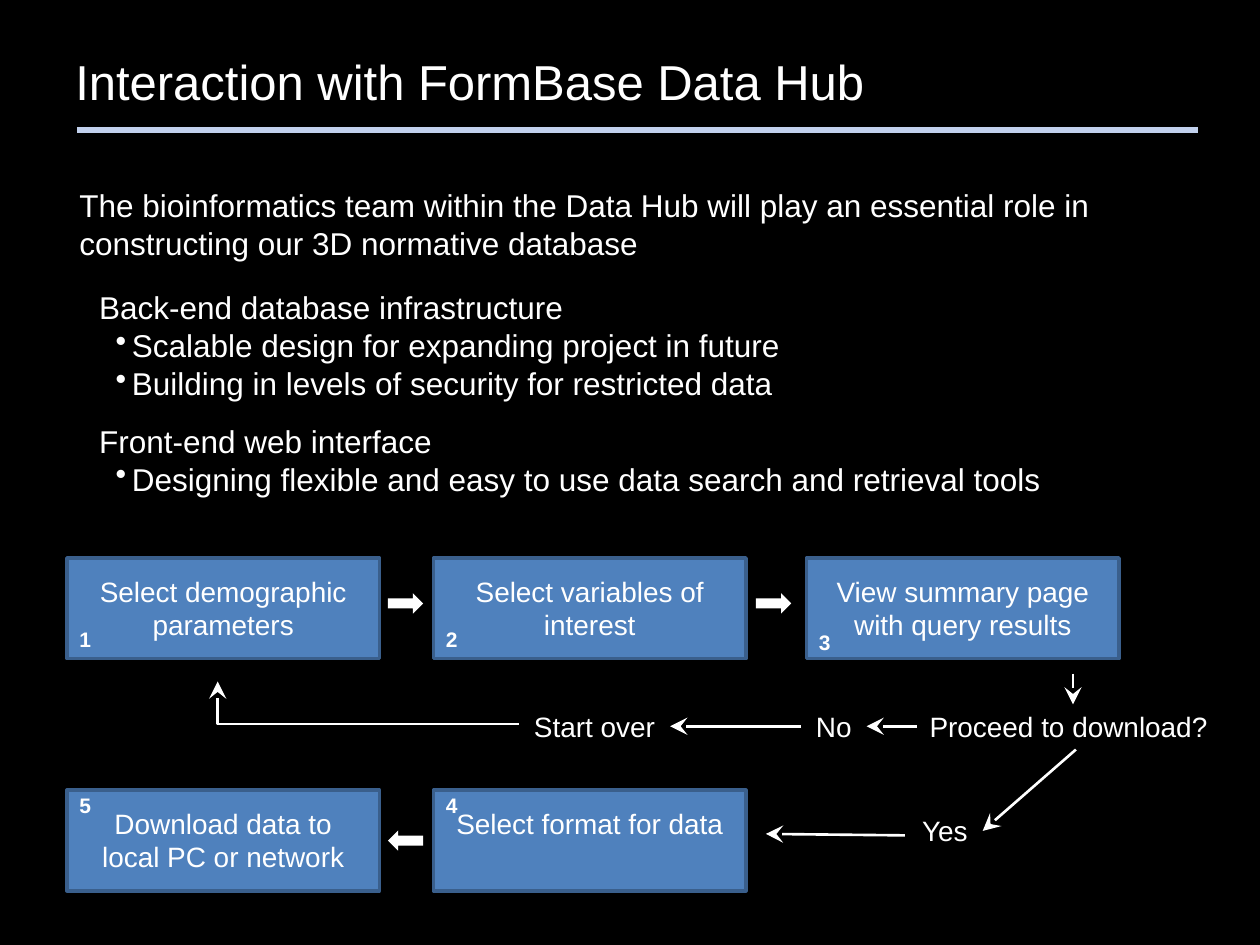
from lxml.etree import SubElement
from pptx import Presentation
from pptx.dml.color import RGBColor
from pptx.enum.shapes import MSO_CONNECTOR as CONN, MSO_SHAPE as SHAPE
from pptx.enum.text import MSO_AUTO_SIZE as AUTO, PP_ALIGN as ALIGN
from pptx.oxml.ns import qn
from pptx.util import Cm, Pt

COLORS = {"bg": "000000", "text": "FFFFFF", "rule": "C2D1ED",
          "box": "4F81BD", "edge": "3A5F8C"}
BOX_W, BOX_H, PAD = 6.3, 2.03, 0.2
COLS, ROWS = (1.35, 8.74, 16.26), (11.25, 15.93)
STEPS = [
    (1, 0, 0, "Select demographic parameters", 12.5),
    (2, 1, 0, "Select variables of interest", 12.5),
    (3, 2, 0, "View summary page with query results", 12.57),
    (4, 1, 1, "Select format for data", 15.85),
    (5, 0, 1, "Download data to local PC or network", 15.85),
]
BLOCK_ARROWS = [(7.82, 11.96, 0), (15.24, 11.96, 0), (7.82, 16.74, 180)]
ANSWERS = [
    ("Proceed to download?", 18.49, 14.17, 6.4, ALIGN.LEFT),
    ("No", 16.15, 14.17, 1.32, ALIGN.CENTER),
    ("Yes", 18.29, 16.28, 1.52, ALIGN.CENTER),
    ("Start over", 10.46, 14.17, 3.05, ALIGN.CENTER),
]
TOPICS = [
    (5.69, 2.57, "Back-end database infrastructure",
     ["Scalable design for expanding project in future",
      "Building in levels of security for restricted data"]),
    (8.38, 1.8, "Front-end web interface",
     ["Designing flexible and easy to use data search and retrieval tools"]),
]


class Deck:
    """Hold the style and the current slide, and draw each kind of element."""

    def __init__(self, prs, font="Arial"):
        self.font = font
        self.s = prs.slides.add_slide(prs.slide_layouts[6])
        fill = self.s.background.fill
        fill.solid()
        fill.fore_color.rgb = self.color("bg")

    def color(self, name):
        return RGBColor.from_string(COLORS[name])

    def text(self, lines, x, y, w, h, size, align=ALIGN.LEFT, bold=False):
        sp = self.s.shapes.add_textbox(Cm(x), Cm(y), Cm(w), Cm(h))
        tf = sp.text_frame
        tf.word_wrap = True
        tf.auto_size = AUTO.SHAPE_TO_FIT_TEXT
        tf.text = "\n".join(lines)
        for p in tf.paragraphs:
            p.alignment = align
            p.font.name = self.font
            p.font.size = Pt(size)
            p.font.bold = bold
            p.font.color.rgb = self.color("text")
        return sp

    def topic(self, y, h, heading, items):
        sp = self.text([heading, *items], 1.75, y, 22.8, h, 18)
        for p in sp.text_frame.paragraphs[1:]:
            pPr = p._p.get_or_add_pPr()
            pPr.set("marL", str(Cm(0.66)))
            pPr.set("indent", str(Cm(-0.33)))
            bullet = pPr.makeelement(qn("a:buChar"), {"char": "•"})
            pPr.insert(0, bullet)

    def shape(self, kind, x, y, w, h, fill, edge=None, rotation=0):
        sp = self.s.shapes.add_shape(kind, Cm(x), Cm(y), Cm(w), Cm(h))
        sp.shadow.inherit = False
        sp.rotation = rotation
        sp.fill.solid()
        sp.fill.fore_color.rgb = self.color(fill)
        if edge:
            sp.line.color.rgb = self.color(edge)
            sp.line.width = Pt(2)
        else:
            sp.line.fill.background()

    def line(self, x1, y1, x2, y2, color="text", width=1.5, arrow=True,
             kind=CONN.STRAIGHT):
        c = self.s.shapes.add_connector(kind, Cm(x1), Cm(y1), Cm(x2), Cm(y2))
        c.line.color.rgb = self.color(color)
        c.line.width = Pt(width)
        if arrow:
            SubElement(c.line._get_or_add_ln(), qn("a:tailEnd"),
                       type="stealth", w="lg", len="lg")
        SubElement(c._element.spPr, qn("a:effectLst"))
        return c

    def corner(self, x1, y1, x2, y2):
        c = self.line(x1, y1, x2, y2, kind=CONN.ELBOW)
        guides = c._element.spPr.find(qn("a:prstGeom")).get_or_add_avLst()
        SubElement(guides, qn("a:gd"), name="adj1", fmla="val 100000")

    def link(self, start, start_site, end, end_site):
        c = self.line(0, 0, 1, 1)
        c.begin_connect(start, start_site)
        c.end_connect(end, end_site)


def main():
    prs = Presentation()
    prs.slide_width, prs.slide_height = Cm(25.4), Cm(19.05)
    deck = Deck(prs)

    deck.text(["Interaction with FormBase Data Hub"], 1.27, 0.91, 22.86, 1.45, 28)
    deck.line(1.55, 2.62, 24.16, 2.62, "rule", 3, arrow=False)
    deck.text(["The bioinformatics team within the Data Hub will play an essential "
               "role in constructing our 3D normative database"],
              1.35, 3.63, 22.8, 1.8, 18)
    for topic in TOPICS:
        deck.topic(*topic)

    for number, col, row, label, number_y in STEPS:
        x, y = COLS[col], ROWS[row]
        deck.shape(SHAPE.RECTANGLE, x, y, BOX_W, BOX_H, "box", "edge")
        deck.text([label], x + PAD, y + PAD, BOX_W - 2 * PAD, BOX_H - 2 * PAD,
                  16, ALIGN.CENTER)
        deck.text([str(number)], x, number_y, 0.71, 0.76, 12, ALIGN.CENTER, True)
    for x, y, rotation in BLOCK_ARROWS:
        deck.shape(SHAPE.RIGHT_ARROW, x, y, 0.71, 0.41, "text", rotation=rotation)

    proceed, no, yes, restart = [
        deck.text([label], x, y, w, 0.94, 16, align)
        for label, x, y, w, align in ANSWERS]
    deck.link(proceed, 2, yes, 3)
    deck.link(proceed, 1, no, 3)
    deck.link(no, 1, restart, 3)
    deck.line(18.24, 16.84, 15.44, 16.81)
    deck.corner(10.46, 14.6, 4.39, 13.74)
    deck.line(21.63, 13.58, 21.63, 14.2)

    prs.save("out.pptx")


if __name__ == "__main__":
    main()
